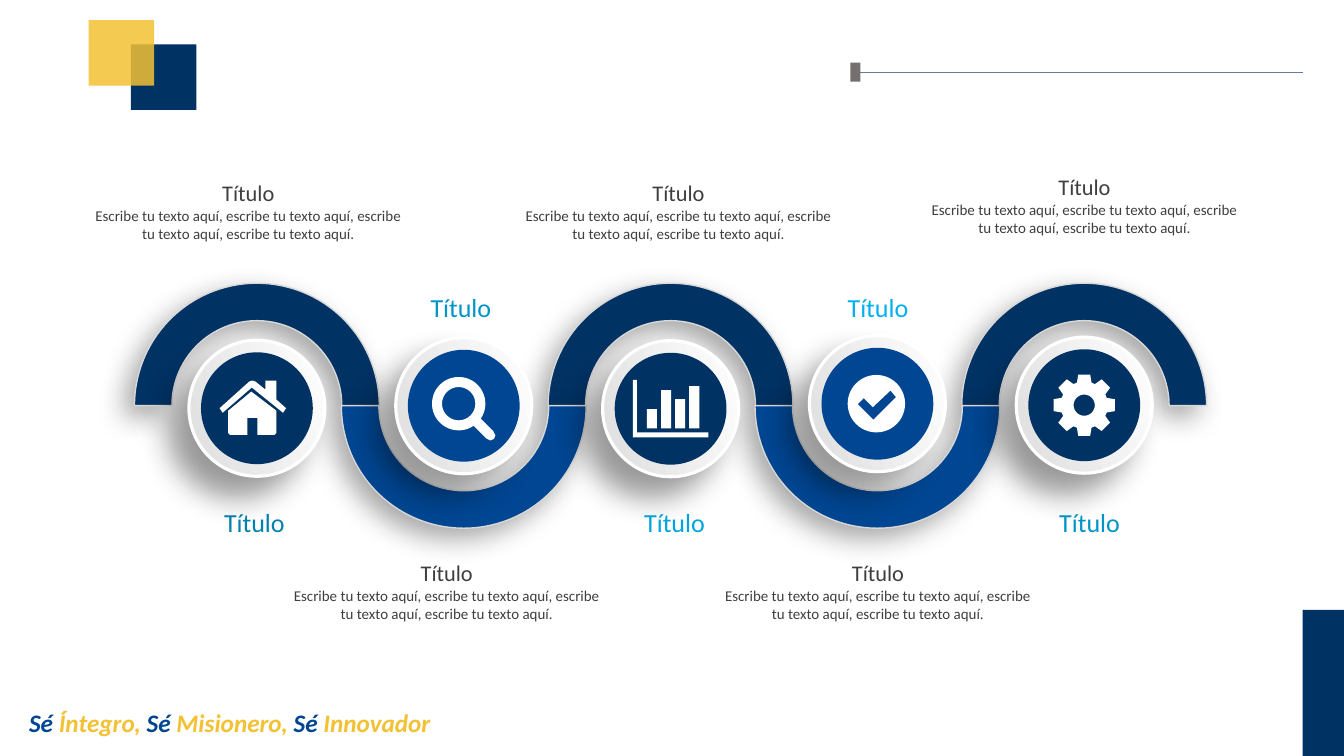
from collections import namedtuple
from math import cos, radians, sin

from lxml import etree
from pptx import Presentation, util as u
from pptx.dml import color
from pptx.enum import shapes, text
from pptx.oxml import ns

COLORS = {
    "navy": "003264", "blue": "004692", "gold": "F3C133", "grey": "757070",
    "rule": "637D9C", "arc_edge": "D8D8D8", "white": "FFFFFF", "silver": "DDDEDD",
    "body": "3F3F3F", "black": "000000", "teal": "0082B0", "cyan": "0094C8",
    "sky": "00A4DE", "bright": "00B0F0",
}
FONT = "Calibri"
CELL = u.Inches(0.1)  # the slide is a grid of 133.4 columns by 75 rows
FILLER = ("Escribe tu texto aquí, escribe tu texto aquí, "
          "escribe tu texto aquí, escribe tu texto aquí.")

Step = namedtuple("Step", "fill icon row label_color label_col note_col note_row")
Run = namedtuple("Run", "words size color bold", defaults=(False,))


def cells(*counts):
    return [round(count * CELL) for count in counts]


def rgb(name):
    return color.RGBColor.from_string(COLORS[name])


def arc(col, row, radius, start=0, end=360, pieces=48):
    """Points along a circle, angles in degrees clockwise from the right."""
    angles = [radians(start + (end - start) * i / pieces) for i in range(pieces + 1)]
    return [(col + radius * cos(a), row + radius * sin(a)) for a in angles]


def box(left, top, right, bottom):
    return [(left, top), (right, top), (right, bottom), (left, bottom)]


def house():
    roof = [(-3.7, 0), (-3.4, 0.45), (-0.5, -2.05), (2.6, 0.45), (2.9, 0),
            (1.95, -0.85), (1.95, -2.75), (0.85, -2.75), (0.85, -1.85),
            (-0.15, -2.65), (-0.45, -2.75), (-0.75, -2.65)]
    walls = [(1.95, 0.25), (1.95, 2.45), (1.75, 2.65), (0.05, 2.65), (0.05, 0.95),
             (-0.95, 0.95), (-0.95, 2.65), (-2.65, 2.65), (-2.85, 2.45),
             (-2.85, 0.25), (-0.55, -1.65)]
    return [roof, walls]


def magnifier():
    handle = [(0.95, 1.95), (2.25, 3.25), (2.65, 3.45), (3, 3.3), (3.15, 2.95),
              (2.95, 2.55), (1.65, 1.25)]
    return [arc(-0.5, -0.2, 2.65, 34, -304) + handle, arc(-0.5, -0.2, 1.65)]


def bars():
    axes = [(-3.75, -2.85), (-3.35, -2.85), (-3.35, 2.35), (3.75, 2.35),
            (3.75, 2.85), (-3.75, 2.85)]
    tops = (0.05, -1.85, -0.95, -2.25)
    return [axes] + [box(-2.35 + 1.4 * i, top, -1.35 + 1.4 * i, 1.95)
                     for i, top in enumerate(tops)]


def check():
    tick = [(1.3, -1.3), (-0.45, 0.35), (-1.35, -0.55), (-1.95, 0.05),
            (-0.4, 1.6), (1.85, -0.65)]
    return [arc(-0.1, 0, 2.85), tick]


def gear():
    tooth = [(-18, 2.35), (-11, 3.1), (11, 3.1), (18, 2.35)]
    rim = [(r * cos(radians(45 * i + a)), r * sin(radians(45 * i + a)))
           for i in range(8) for a, r in tooth]
    return [rim, arc(0, 0, 1.05)]


class Slide:
    def __init__(self, deck):
        self.shapes = deck.slides.add_slide(deck.slide_layouts[6]).shapes

    def shape(self, kind, left, top, width, height, fill, edge=None, points=1, alpha=None):
        part = self.shapes.add_shape(kind, *cells(left, top, width, height))
        self.paint(part, fill)
        if edge:
            part.line.color.rgb = rgb(edge)
            part.line.width = u.Pt(points)
        if alpha:
            tint = part._element.spPr.find(".//" + ns.qn("a:srgbClr"))
            etree.SubElement(tint, ns.qn("a:alpha"), val=str(alpha * 1000))
        return part

    def paint(self, part, fill):
        part.shadow.inherit = False
        part.fill.solid()
        part.fill.fore_color.rgb = rgb(fill)
        part.line.fill.background()

    def cast_shadow(self, part, alpha, blur, distance, angle):
        effects = part._element.spPr.find(ns.qn("a:effectLst"))
        outer = etree.SubElement(
            effects, ns.qn("a:outerShdw"), blurRad=str(u.Pt(blur)),
            dist=str(u.Pt(distance)), dir=str(angle * 60000), rotWithShape="0")
        tint = etree.SubElement(outer, ns.qn("a:srgbClr"), val=COLORS["black"])
        etree.SubElement(tint, ns.qn("a:alpha"), val=str(alpha * 1000))

    def rule(self, left, right, row):
        line = self.shapes.add_connector(
            shapes.MSO_CONNECTOR.STRAIGHT, *cells(left, row, right, row))
        line.line.color.rgb = rgb("rule")
        line.line.width = u.Pt(0.75)
        etree.SubElement(line._element.spPr, ns.qn("a:effectLst"))

    def wave(self, center, fill, flipped):
        part = self.shape(shapes.MSO_SHAPE.BLOCK_ARC, center - 12.15, 28.1, 24.3, 24.3,
                          fill, "arc_edge")
        for i, value in enumerate((108, 0, 0.153)):
            part.adjustments[i] = value
        part.rotation = 180 if flipped else 0
        self.cast_shadow(part, 34, 20, 10, 136)

    def badge(self, col, row, fill, outlines):
        """A silver ring and a coloured disc with a white icon on it."""
        oval = shapes.MSO_SHAPE.OVAL
        ring = self.shape(oval, col - 6.75, row - 6.75, 13.5, 13.5, "white", "white", 2.25)
        ring.fill.gradient()
        ring.fill.gradient_angle = 200
        for stop, name in zip(ring.fill.gradient_stops, ("white", "silver")):
            stop.color.rgb = rgb(name)
        self.cast_shadow(ring, 40, 22, 20, 135)
        self.shape(oval, col - 5.55, row - 5.55, 11.1, 11.1, fill)
        self.icon(col, row, outlines)

    def icon(self, col, row, outlines):
        contours = [[cells(col + x, row + y) for x, y in points] for points in outlines]
        pen = self.shapes.build_freeform(*contours[0][0])
        for i, (start, *rest) in enumerate(contours):
            if i:
                pen.move_to(*start)
            pen.add_line_segments(rest, close=True)
        self.paint(pen.convert_to_shape(), "white")

    def text_box(self, left, top, width, height, paragraphs, centered=True, tight=False,
                 italic=False):
        frame = self.shapes.add_textbox(*cells(left, top, width, height)).text_frame
        frame.word_wrap = not tight
        frame.auto_size = text.MSO_AUTO_SIZE.SHAPE_TO_FIT_TEXT
        if tight:
            frame.vertical_anchor = text.MSO_ANCHOR.MIDDLE
            frame.margin_left = frame.margin_right = 0
            frame.margin_top = frame.margin_bottom = 0
        for i, runs in enumerate(paragraphs):
            paragraph = frame.add_paragraph() if i else frame.paragraphs[0]
            paragraph.alignment = text.PP_ALIGN.CENTER if centered else text.PP_ALIGN.LEFT
            for item in runs:
                run = paragraph.add_run()
                run.text = item.words
                run.font.name, run.font.size = FONT, u.Pt(item.size)
                run.font.bold, run.font.italic = item.bold, italic
                run.font.color.rgb = rgb(item.color)


def add_frame(slide):
    """The fixed decoration and the motto."""
    rect = shapes.MSO_SHAPE.RECTANGLE
    slide.rule(129.3, 85.3, 7.2)
    slide.shape(rect, 84.4, 6.2, 1, 1.9, "grey")
    slide.shape(rect, 13, 4.4, 6.5, 6.5, "navy")
    slide.shape(rect, 8.8, 2, 6.5, 6.5, "gold", alpha=85)
    motto = []
    for value in (" Íntegro, ", " Misionero, ", " Innovador"):
        motto += [Run("Sé", 18, "blue", True), Run(value, 18, "gold", True)]
    slide.text_box(1.9, 69.7, 55.6, 4, [motto], centered=False, italic=True)
    slide.shape(rect, 129.3, 60.5, 4.1, 14.5, "navy")


def main():
    deck = Presentation()
    deck.slide_width, deck.slide_height = cells(133.4, 75)
    slide = Slide(deck)
    add_frame(slide)

    steps = [
        Step("navy", house, 40.5, "teal", 22.2, 7.8, 17.3),
        Step("blue", magnifier, 40.25, "cyan", 42.7, 27.5, 55),
        Step("navy", bars, 40.55, "sky", 63.9, 50.5, 17.3),
        Step("blue", check, 40.05, "bright", 84.1, 70.3, 55),
        Step("navy", gear, 40.2, "cyan", 105.1, 90.8, 16.7),
    ]
    centers = [25.5 + 20.53 * i for i in range(len(steps))]
    placed = list(zip(centers, steps))

    for flipped in (False, True):
        for center, step in placed[flipped::2]:
            slide.wave(center, step.fill, flipped)
    for i, (center, step) in enumerate(placed):
        slide.text_box(step.label_col, 28.9 if i % 2 else 50.2, 6.1, 3.1,
                       [[Run("Título", 18.6, step.label_color)]], tight=True)
        slide.badge(center, step.row, step.fill, step.icon())
        slide.text_box(step.note_col, step.note_row, 33.7, 7.3,
                       [[Run("Título", 16, "body")], [Run(FILLER, 10.7, "body")]])
    deck.save("out.pptx")


if __name__ == "__main__":
    main()
